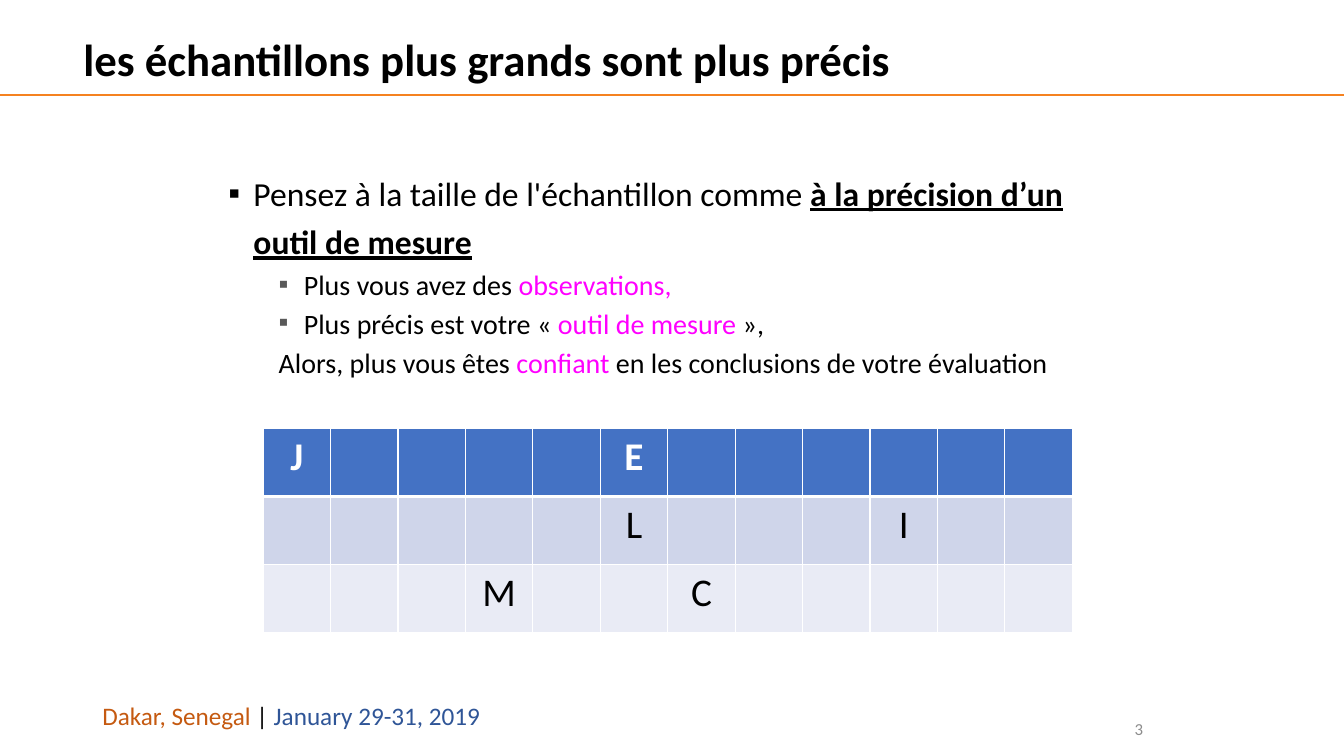
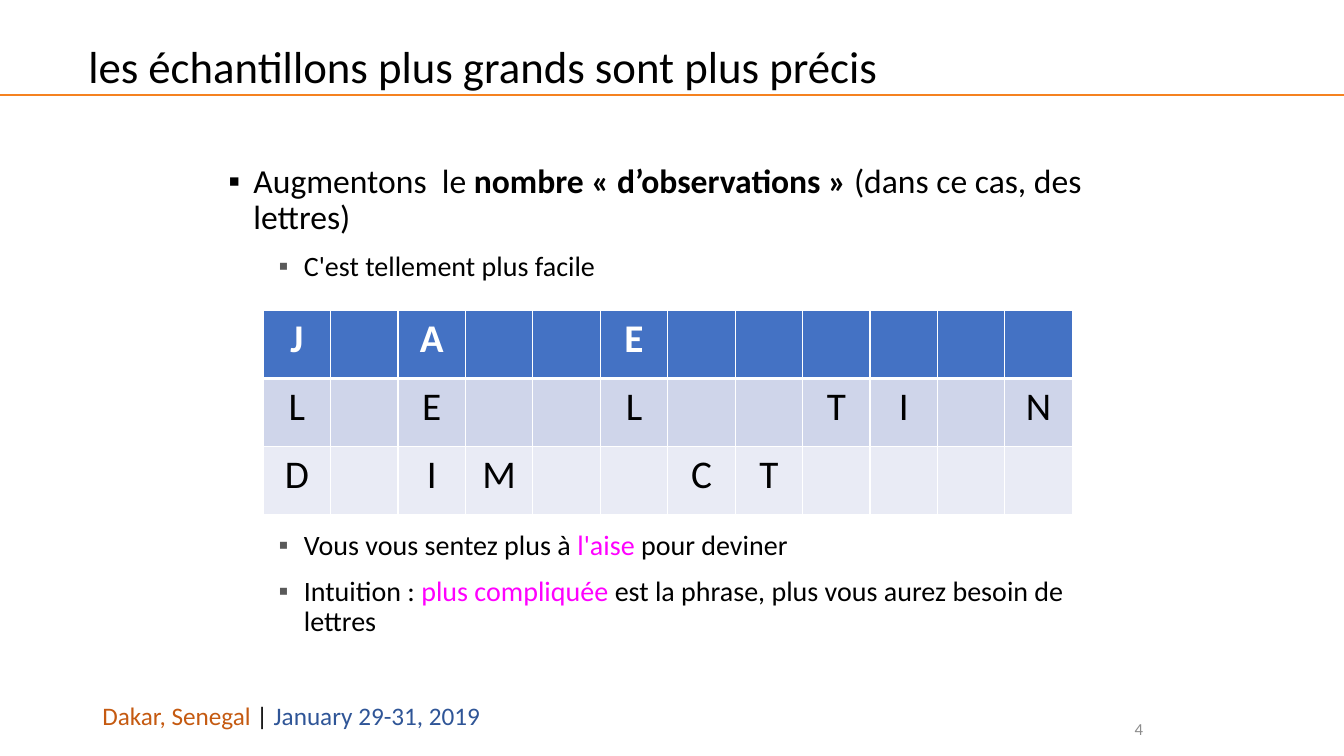
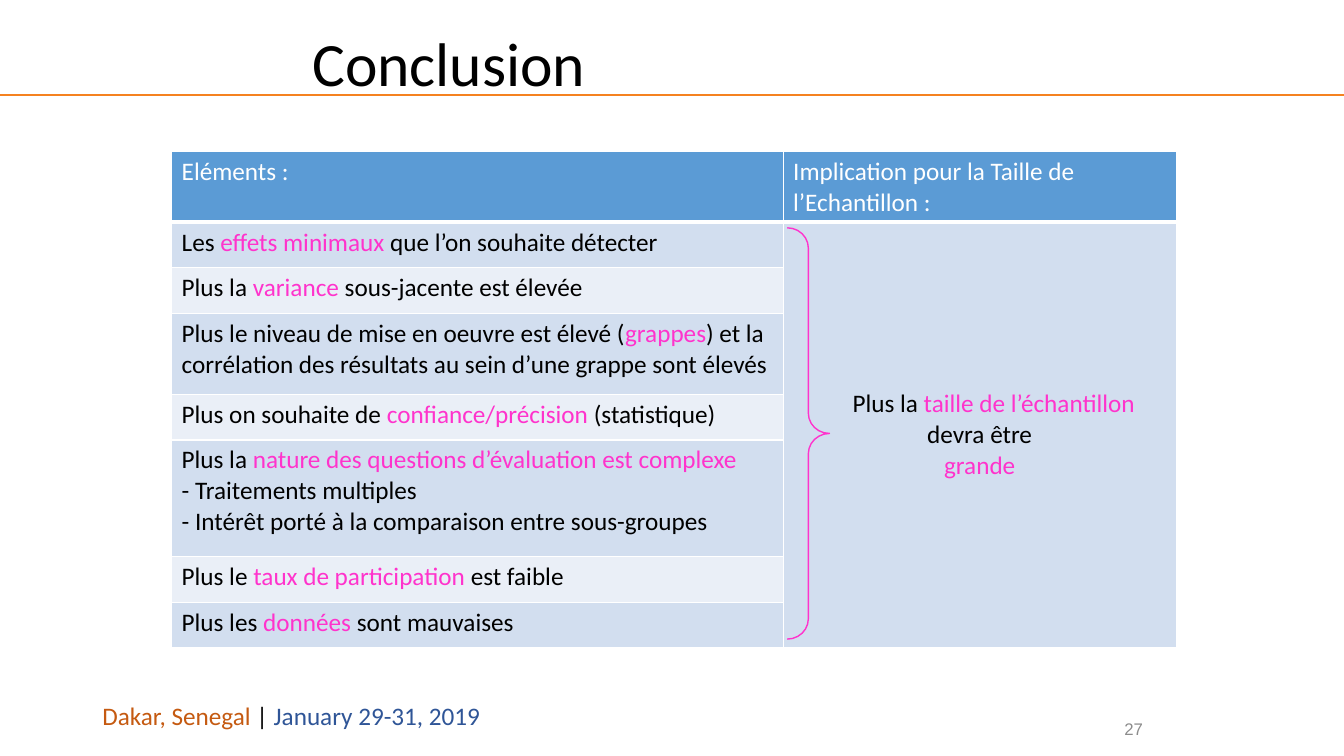
import pptx
import pptx.dml.color
import pptx.enum.shapes
import pptx.enum.text
import pptx.oxml.ns
import pptx.util
from lxml import etree

Pt = pptx.util.Pt
ALIGN = pptx.enum.text.PP_ALIGN
ANCHOR = pptx.enum.text.MSO_ANCHOR
qn = pptx.oxml.ns.qn

FONT = "Calibri"
COLORS = {
    "text": "000000", "white": "FFFFFF", "rule": "F58220",
    "place": "C55A11", "date": "2F5597", "number": "8C8C8C",
    "sub_bullet": "595959", "magenta": "FF00FF", "pink": "FF33CC",
    "grid_head": "4472C4", "grid_dark": "CFD5EA", "grid_light": "E9EBF5",
    "list_head": "5B9BD5", "list_dark": "D2DEEF", "list_light": "EAEFF7",
}
W, H = 960, 540
BODY_LEFT, BODY_WIDTH = 156, 648
GRID_LEFT, GRID_WIDTH, GRID_HEIGHT = 188, 578, 145.8
KEY = {"color": "magenta"}
PINK = {"color": "pink"}
BOLD = {"bold": True}
TITLE = "les échantillons plus grands sont plus précis"


def rgb(name):
    return pptx.dml.color.RGBColor.from_string(COLORS[name])


# Text helpers
def add_runs(p, runs, size, color="text", font=FONT, bold=False):
    """Each run is a string, or a string with the style that differs."""
    for run in runs:
        text, style = (run, {}) if isinstance(run, str) else run
        r = p.add_run()
        r.text = text
        r.font.size = Pt(size)
        r.font.name = font
        r.font.bold = style.get("bold", bold)
        r.font.underline = style.get("underline", False)
        r.font.color.rgb = rgb(style.get("color", color))


def add_text_box(s, left, top, width, height, anchor=ANCHOR.TOP):
    tf = s.shapes.add_textbox(Pt(left), Pt(top), Pt(width), Pt(height)).text_frame
    tf.word_wrap = True
    tf.vertical_anchor = anchor
    return tf


def set_indent(p, left, first=0):
    pPr = p._p.get_or_add_pPr()
    pPr.set("marL", str(Pt(left)))
    pPr.set("indent", str(Pt(first)))
    return pPr


def add_bullet(pPr, color):
    clr = etree.SubElement(pPr, qn("a:buClr"))
    etree.SubElement(clr, qn("a:srgbClr"), val=COLORS[color])
    etree.SubElement(pPr, qn("a:buFont"), typeface="Arial")
    etree.SubElement(pPr, qn("a:buChar"), char="▪")


def add_body(s, top, height, items):
    """Each item is (level, bulleted, line spacing, runs)."""
    tf = add_text_box(s, BODY_LEFT, top, BODY_WIDTH, height)
    for i, (level, bulleted, spacing, runs) in enumerate(items):
        p = tf.paragraphs[0] if i == 0 else tf.add_paragraph()
        if bulleted:
            pPr = set_indent(p, 18 + 36 * level, -18)
            add_bullet(pPr, "sub_bullet" if level else "text")
        else:
            set_indent(p, 36 * level)
        p.line_spacing = spacing
        p.space_before = Pt(5 if i else 0)
        p.space_after = Pt(6)
        add_runs(p, runs, 20 if level else 24)


# Table helpers
def style_cell(cell, fill, bottom=1):
    cell.fill.solid()
    cell.fill.fore_color.rgb = rgb(fill)
    tcPr = cell._tc.get_or_add_tcPr()
    sides = (("L", 1), ("R", 1), ("T", 1), ("B", bottom))
    for i, (side, width) in enumerate(sides):
        ln = etree.Element(qn("a:ln" + side), w=str(Pt(width)))
        solid = etree.SubElement(ln, qn("a:solidFill"))
        etree.SubElement(solid, qn("a:srgbClr"), val=COLORS["white"])
        tcPr.insert(i, ln)


def add_table(s, left, top, widths, heights, palette):
    """Add a table with a header row and alternating row fills."""
    table = s.shapes.add_table(len(heights), len(widths), Pt(left), Pt(top),
                               Pt(sum(widths)), Pt(sum(heights))).table
    for column, width in zip(table.columns, widths):
        column.width = Pt(width)
    for i, (row, height) in enumerate(zip(table.rows, heights)):
        row.height = Pt(height)
        band = "head" if i == 0 else "dark" if i % 2 else "light"
        for cell in row.cells:
            style_cell(cell, f"{palette}_{band}", 1 if i else 3)
    return table


def add_letter_grid(s, top, rows):
    """Add a grid of letters; a dot marks an empty cell."""
    columns = len(rows[0])
    table = add_table(s, GRID_LEFT, top, [GRID_WIDTH / columns] * columns,
                      [GRID_HEIGHT / len(rows)] * len(rows), "grid")
    for i, letters in enumerate(rows):
        for j, letter in enumerate(letters):
            if letter != ".":
                p = table.cell(i, j).text_frame.paragraphs[0]
                p.alignment = ALIGN.CENTER
                add_runs(p, [letter], 28, "text" if i else "white", bold=i == 0)


# Shared frame: rule, footer, title and slide number
def add_frame(prs, number, title, box, size=32, bold=False, number_font=FONT):
    s = prs.slides.add_slide(prs.slide_layouts[6])
    rule = s.shapes.add_connector(pptx.enum.shapes.MSO_CONNECTOR.STRAIGHT,
                                  Pt(0), Pt(67.7), Pt(W), Pt(67.7))
    rule.line.color.rgb = rgb("rule")
    rule.line.width = Pt(1.5)
    etree.SubElement(rule._element.spPr, qn("a:effectLst"))

    tf = add_text_box(s, 66, 497, 300, 36)
    add_runs(tf.paragraphs[0], [("Dakar, Senegal ", {"color": "place"}), "| ",
                                ("January 29-31, 2019", {"color": "date"})], 18)

    p = add_text_box(s, *box, ANCHOR.MIDDLE).paragraphs[0]
    p.line_spacing = 0.9
    add_runs(p, [title], size, bold=bold)

    p = add_text_box(s, 766, 510, 57.6, 21.6, ANCHOR.MIDDLE).paragraphs[0]
    p.alignment = ALIGN.RIGHT
    add_runs(p, [number], 12, "number", number_font)
    return s


# Slide types
def add_precision_slide(prs):
    s = add_frame(prs, "3", TITLE, (52.5, -9.5, 614, 108), bold=True)
    add_body(s, 114, 180, [
        (0, True, 1.2, ["Pensez à la taille de l'échantillon comme ",
                        ("à la précision d’un outil de mesure",
                         {"bold": True, "underline": True})]),
        (1, True, 0.7, ["Plus vous avez des ", ("observations,", KEY)]),
        (1, True, 0.7, ["Plus précis est votre «\u00a0",
                        ("outil de mesure", KEY), "\u00a0»,"]),
        (1, False, 0.7, ["Alors, plus vous êtes ", ("confiant ", KEY),
                         "en les conclusions de votre évaluation"]),
    ])
    add_letter_grid(s, 306, ["J....E......", ".....L...I..", "...M..C....."])


def add_observations_slide(prs):
    s = add_frame(prs, "4", TITLE, (56, -5, 607, 108))
    add_body(s, 114, 96, [
        (0, True, 0.9, ["Augmentons  le ", ("nombre «\u00a0d’observations\u00a0» ", BOLD),
                        "(dans ce cas, des lettres)"]),
        (1, True, 0.9, ["C'est tellement plus facile"]),
    ])
    add_letter_grid(s, 221.8, ["J.A..E......", "L.E..L..TI.N", "D.IM..CT...."])
    add_body(s, 376, 90, [
        (1, True, 0.9, ["Vous vous sentez plus à", (" l'aise ", KEY), "pour deviner"]),
        (1, True, 0.9, ["Intuition : ", ("plus compliquée ", KEY),
                        "est la phrase, plus vous aurez besoin de lettres"]),
    ])


def add_conclusion_slide(prs):
    s = add_frame(prs, "27", "Conclusion", (216, 11, 534, 72.5), size=44,
                  number_font="Arial")
    # One entry per row: its height and its paragraphs
    rows = [
        (50.5, [["Eléments :"]]),
        (32.5, [["Les ", ("effets minimaux ", PINK), "que l’on souhaite détecter"]]),
        (32.5, [["Plus la ", ("variance ", PINK), "sous-jacente est élevée"]]),
        (58, [["Plus le niveau de mise en oeuvre est élevé (", ("grappes", PINK),
               ") et la corrélation des résultats au sein d’une grappe sont élevés"]]),
        (32.5, [["Plus on souhaite de ", ("confiance/précision ", PINK),
                 "(statistique)"]]),
        (83.5, [["Plus la ", ("nature des questions d’évaluation est complexe", PINK)],
                ["- Traitements multiples"],
                ["- Intérêt porté à la comparaison entre sous-groupes"]]),
        (32.5, [["Plus le ", ("taux de participation ", PINK), "est faible"]]),
        (32.5, [["Plus les ", ("données ", PINK), "sont mauvaises"]]),
    ]
    table = add_table(s, 122.6, 108.3, [436.8, 280.8], [h for h, _ in rows], "list")

    def fill_cell(cell, paragraphs, color="text", align=ALIGN.LEFT):
        tf = cell.text_frame
        for i, runs in enumerate(paragraphs):
            p = tf.paragraphs[0] if i == 0 else tf.add_paragraph()
            p.alignment = align
            add_runs(p, runs, 18, color)

    for i, (_, paragraphs) in enumerate(rows):
        fill_cell(table.cell(i, 0), paragraphs, "text" if i else "white")
    fill_cell(table.cell(0, 1), [["Implication pour la Taille de l’Echantillon :"]],
              "white")

    # Merged implication cell
    implication = table.cell(1, 1)
    implication.merge(table.cell(len(rows) - 1, 1))
    implication.vertical_anchor = ANCHOR.MIDDLE
    fill_cell(implication, [["Plus la ", ("taille de l’échantillon", PINK)],
                            ["devra être"], [("grande", PINK)]], align=ALIGN.CENTER)
    set_indent(implication.text_frame.paragraphs[0], 20)

    # Brace joining the rows to the implication
    sp = s.shapes.add_shape(pptx.enum.shapes.MSO_SHAPE.RIGHT_BRACE,
                            Pt(562.3), Pt(162.7), Pt(30.2), Pt(293.8))
    sp.adjustments[0] = 0.48
    sp.adjustments[1] = 0.5
    sp.shadow.inherit = False
    sp.fill.background()
    sp.line.color.rgb = rgb("pink")
    sp.line.width = Pt(1)


def main():
    prs = pptx.Presentation()
    prs.slide_width, prs.slide_height = Pt(W), Pt(H)
    add_precision_slide(prs)
    add_observations_slide(prs)
    add_conclusion_slide(prs)
    prs.save("out.pptx")


if __name__ == "__main__":
    main()
